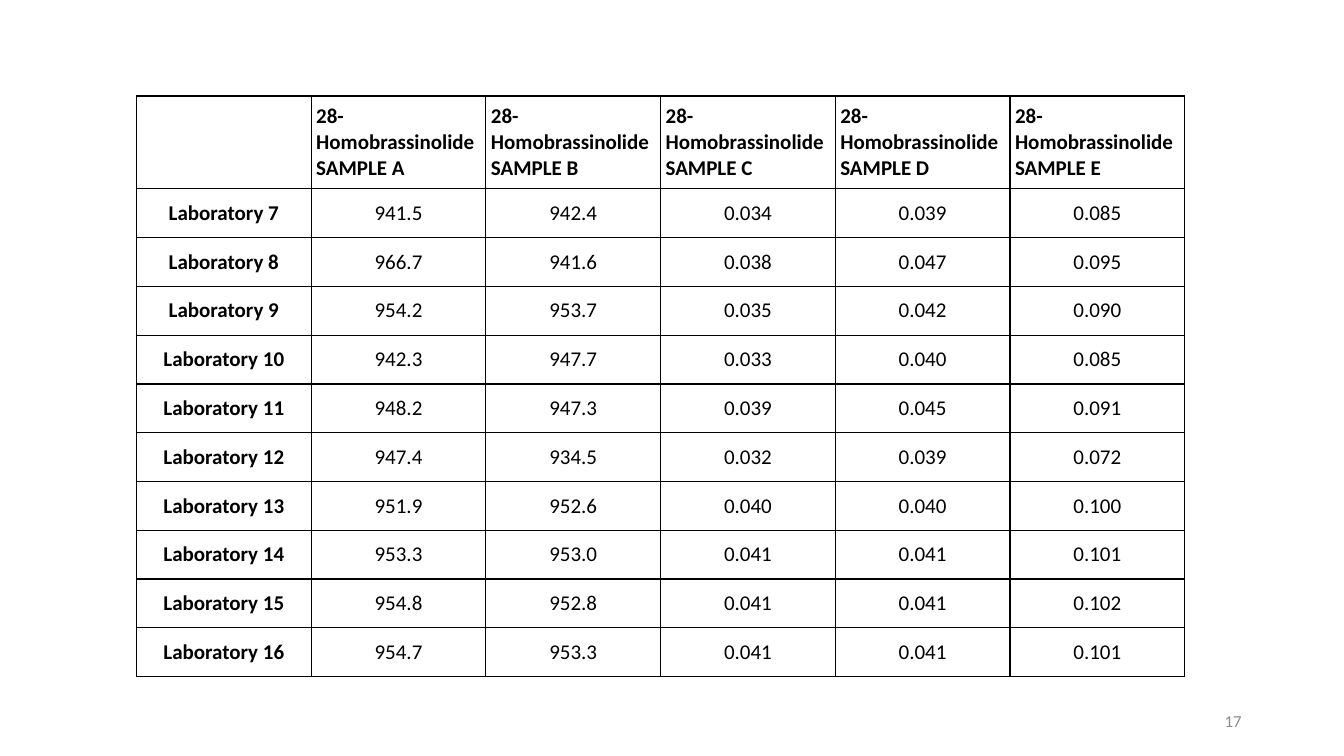
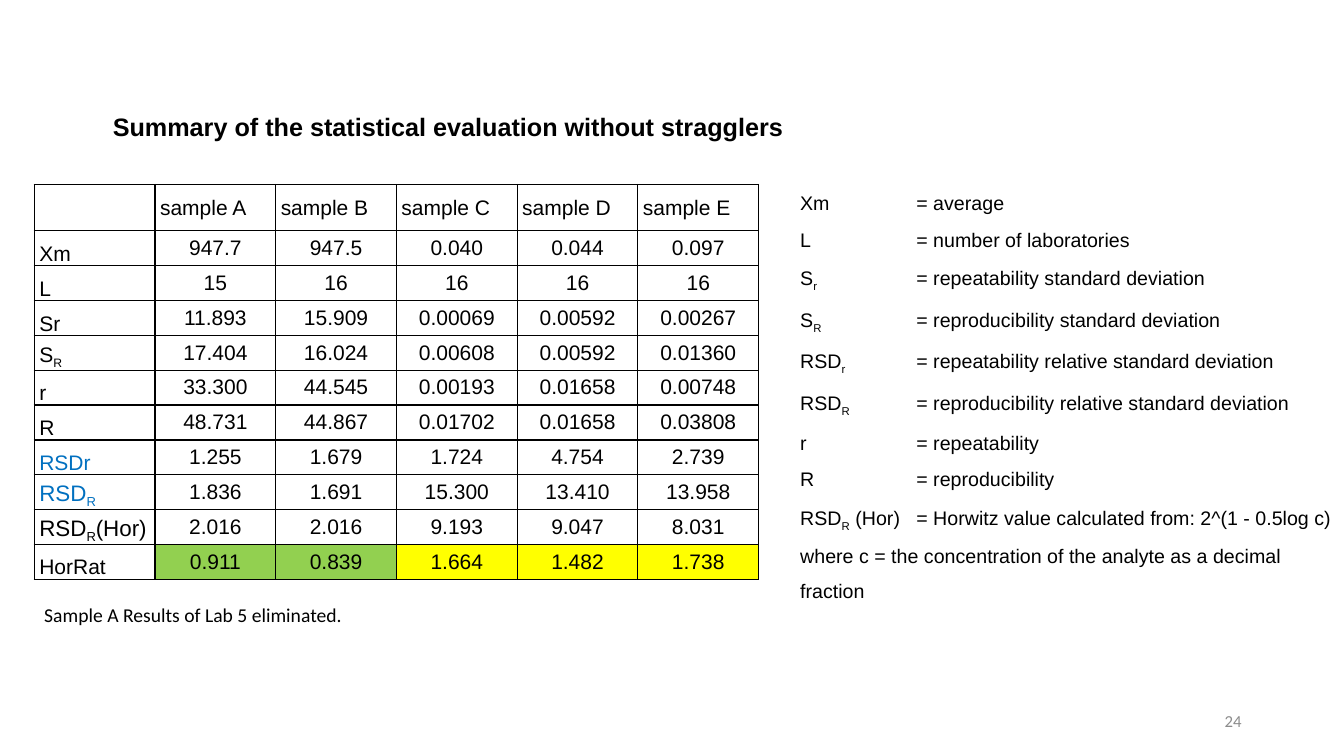
from lxml import etree
from pptx import Presentation
from pptx import util as u
from pptx.dml.color import RGBColor
from pptx.enum import text as t
from pptx.oxml import ns

BLACK = RGBColor(0x00, 0x00, 0x00)
GRAY = RGBColor(0x8C, 0x8C, 0x8C)
BLUE = RGBColor(0x00, 0x70, 0xC0)
GREEN = RGBColor(0x92, 0xD0, 0x50)
YELLOW = RGBColor(0xFF, 0xFF, 0x00)
SAMPLES = "ABCDE"

LABORATORY_RESULTS = [
    ("Laboratory 7", "941.5", "942.4", "0.034", "0.039", "0.085"),
    ("Laboratory 8", "966.7", "941.6", "0.038", "0.047", "0.095"),
    ("Laboratory 9", "954.2", "953.7", "0.035", "0.042", "0.090"),
    ("Laboratory 10", "942.3", "947.7", "0.033", "0.040", "0.085"),
    ("Laboratory 11", "948.2", "947.3", "0.039", "0.045", "0.091"),
    ("Laboratory 12", "947.4", "934.5", "0.032", "0.039", "0.072"),
    ("Laboratory 13", "951.9", "952.6", "0.040", "0.040", "0.100"),
    ("Laboratory 14", "953.3", "953.0", "0.041", "0.041", "0.101"),
    ("Laboratory 15", "954.8", "952.8", "0.041", "0.041", "0.102"),
    ("Laboratory 16", "954.7", "953.3", "0.041", "0.041", "0.101"),
]

# Text between bars is set as subscript.
STATISTICS = [
    ("Xm", "947.7", "947.5", "0.040", "0.044", "0.097"),
    ("L", "15", "16", "16", "16", "16"),
    ("Sr", "11.893", "15.909", "0.00069", "0.00592", "0.00267"),
    ("S|R|", "17.404", "16.024", "0.00608", "0.00592", "0.01360"),
    ("r", "33.300", "44.545", "0.00193", "0.01658", "0.00748"),
    ("R", "48.731", "44.867", "0.01702", "0.01658", "0.03808"),
    ("RSDr", "1.255", "1.679", "1.724", "4.754", "2.739"),
    ("RSD|R|", "1.836", "1.691", "15.300", "13.410", "13.958"),
    ("RSD|R|(Hor)", "2.016", "2.016", "9.193", "9.047", "8.031"),
    ("HorRat", "0.911", "0.839", "1.664", "1.482", "1.738"),
]
LABEL_FORMATS = {
    "RSDr": {"color": BLUE},
    "RSD|R|": {"color": BLUE, "size": 16},
    "RSD|R|(Hor)": {"size": 16},
}
HORRAT_FILLS = [GREEN, GREEN, YELLOW, YELLOW, YELLOW]

LEGEND = [
    ("Xm", "average"),
    ("L", "number of laboratories"),
    ("S|r|", "repeatability standard deviation"),
    ("S|R|", "reproducibility standard deviation"),
    ("RSD|r|", "repeatability relative standard deviation"),
    ("RSD|R|", "reproducibility relative standard deviation"),
    ("r", "repeatability"),
    ("R", "reproducibility"),
    ("RSD|R| (Hor)", "Horwitz value calculated from: 2^(1 - 0.5log c) "
     "where c = the concentration of the analyte as a decimal fraction"),
]


def write_text(paragraph, content, font="Arial", size=15, color=BLACK, bold=False,
               align=t.PP_ALIGN.LEFT, line_spacing=None, space_before=None, tab=None):
    paragraph.alignment = align
    if line_spacing:
        paragraph.line_spacing = line_spacing
    if space_before:
        paragraph.space_before = u.Pt(space_before)
    if tab:
        tabs = etree.SubElement(paragraph._p.get_or_add_pPr(), ns.qn("a:tabLst"))
        etree.SubElement(tabs, ns.qn("a:tab"), pos=str(u.Pt(tab)), algn="l")
    for index, piece in enumerate(content.split("|")):
        if not piece:
            continue
        run = paragraph.add_run()
        run.text = piece
        run.font.name = font
        run.font.size = u.Pt(size)
        run.font.bold = bold
        run.font.color.rgb = color
        if index % 2:
            run._r.get_or_add_rPr().set("baseline", "-25000")


class Deck:
    def __init__(self):
        self.presentation = Presentation()
        self.presentation.slide_width = u.Pt(960)
        self.presentation.slide_height = u.Pt(540)
        self.slide = None

    def add_slide(self, number):
        self.slide = self.presentation.slides.add_slide(self.presentation.slide_layouts[6])
        self.add_text([number], 678, 500.5, 216, 28.75, anchor=t.MSO_ANCHOR.MIDDLE,
                      font="Calibri", size=12, color=GRAY, align=t.PP_ALIGN.RIGHT)

    def add_text(self, lines, left, top, width, height, anchor=t.MSO_ANCHOR.TOP, **style):
        box = self.slide.shapes.add_textbox(u.Pt(left), u.Pt(top), u.Pt(width), u.Pt(height))
        frame = box.text_frame
        frame.word_wrap = True
        frame.vertical_anchor = anchor
        for index, line in enumerate(lines):
            paragraph = frame.add_paragraph() if index else frame.paragraphs[0]
            write_text(paragraph, line, **style)

    def add_table(self, row_count, column_count, left, top, column_width, header_height, row_height):
        frame = self.slide.shapes.add_table(
            row_count, column_count, u.Pt(left), u.Pt(top), u.Pt(column_width * column_count),
            u.Pt(header_height + row_height * (row_count - 1)))
        table = frame.table
        table.first_row = False
        table.horz_banding = False
        for column in table.columns:
            column.width = u.Pt(column_width)
        for index, row in enumerate(table.rows):
            row.height = u.Pt(row_height if index else header_height)
        for cell in table.iter_cells():
            cell.fill.background()
            self.add_borders(cell)
        return table

    def add_borders(self, cell):
        properties = cell._tc.get_or_add_tcPr()
        for index, side in enumerate(("lnL", "lnR", "lnT", "lnB")):
            line = etree.Element(ns.qn(f"a:{side}"), w=str(u.Pt(1)))
            fill = etree.SubElement(line, ns.qn("a:solidFill"))
            etree.SubElement(fill, ns.qn("a:srgbClr"), val=str(BLACK))
            properties.insert(index, line)

    def fill_cell(self, cell, content, anchor=t.MSO_ANCHOR.MIDDLE, inset=3.6, **style):
        cell.vertical_anchor = anchor
        cell.margin_left = cell.margin_right = u.Pt(inset)
        cell.margin_top = cell.margin_bottom = 0
        write_text(cell.text_frame.paragraphs[0], content, **style)


def add_laboratory_slide(deck):
    deck.add_slide("17")
    table = deck.add_table(len(LABORATORY_RESULTS) + 1, 6, 97.5, 68.5, 124.8, 66.4, 34.85)
    for column, sample in enumerate(SAMPLES, 1):
        deck.fill_cell(table.cell(0, column), f"28-Homobrassinolide SAMPLE {sample}",
                       font="Calibri", bold=True)
    for row, values in enumerate(LABORATORY_RESULTS, 1):
        for column, value in enumerate(values):
            deck.fill_cell(table.cell(row, column), value, font="Calibri",
                           bold=column == 0, align=t.PP_ALIGN.CENTER)


def add_summary_slide(deck):
    deck.add_slide("24")
    deck.add_text(["Summary of the statistical evaluation without stragglers"],
                  73.5, 75.6, 604, 29, size=18, bold=True)
    table = deck.add_table(len(STATISTICS) + 1, 6, 24.5, 131.8, 86.25, 33.1, 24.9)
    for column, sample in enumerate(SAMPLES, 1):
        deck.fill_cell(table.cell(0, column), f"sample {sample}")
    for row, (label, *values) in enumerate(STATISTICS, 1):
        deck.fill_cell(table.cell(row, 0), label, anchor=t.MSO_ANCHOR.BOTTOM,
                       **LABEL_FORMATS.get(label, {}))
        for column, value in enumerate(values, 1):
            deck.fill_cell(table.cell(row, column), value, inset=5, align=t.PP_ALIGN.CENTER)
    for column, color in enumerate(HORRAT_FILLS, 1):
        fill = table.cell(len(STATISTICS), column).fill
        fill.solid()
        fill.fore_color.rgb = color
    deck.add_text(["Sample A Results of Lab 5 eliminated."], 24.5, 427, 480, 24.5,
                  font="Calibri", size=14)
    deck.add_text([f"{symbol}\t= {meaning}" for symbol, meaning in LEGEND],
                  564.5, 124.6, 395.5, 295, size=14, line_spacing=1.5, space_before=1, tab=83)


def main():
    deck = Deck()
    add_laboratory_slide(deck)
    add_summary_slide(deck)
    deck.presentation.save("out.pptx")


if __name__ == "__main__":
    main()
